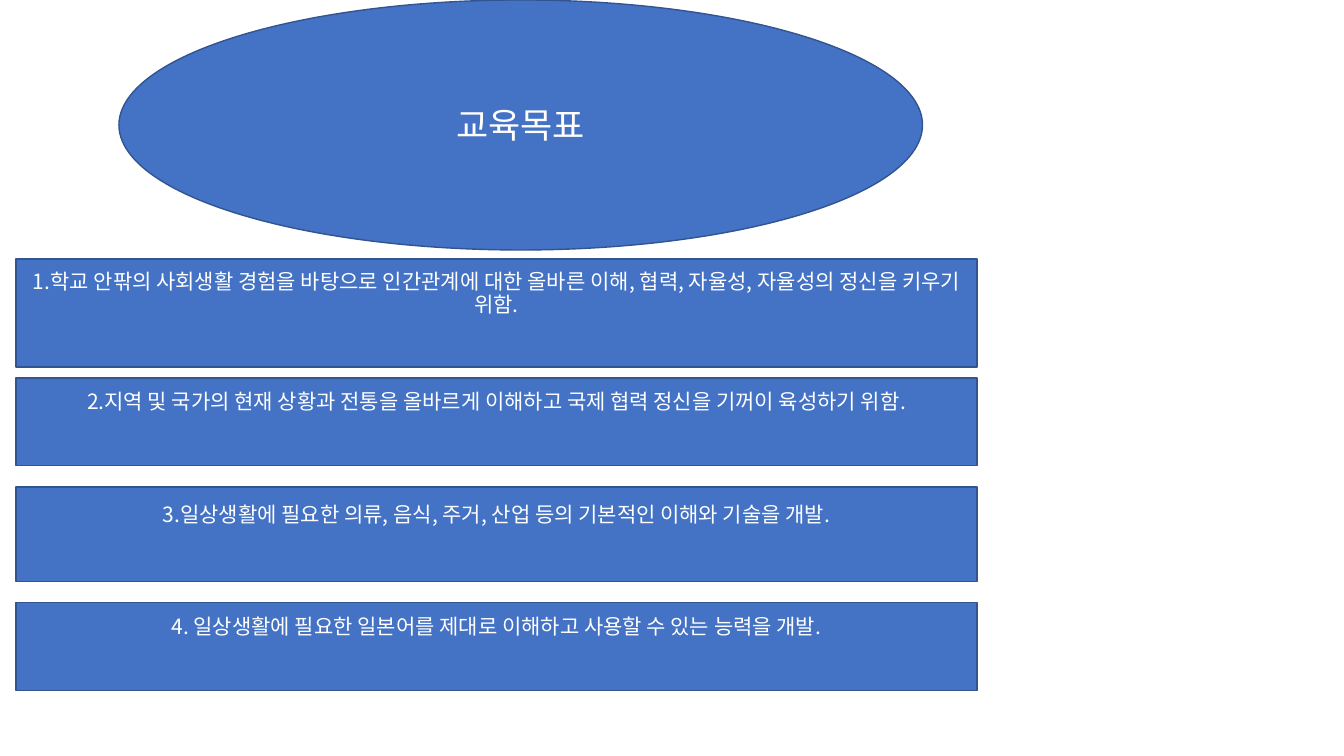
"""Build a slide listing four educational goals under an oval heading."""
from lxml.etree import SubElement
from pptx import Presentation
from pptx.dml.color import RGBColor
from pptx.enum.shapes import MSO_SHAPE as SHAPE
from pptx.enum.text import MSO_ANCHOR as ANCHOR, PP_ALIGN as ALIGN
from pptx.oxml.ns import qn
from pptx.util import Inches, Pt

FONT = "Noto Sans CJK KR"


def color(hex_code):
    return RGBColor.from_string(hex_code)


def add_panel(kind, left, top, width, height, wording, size):
    panel = slide.shapes.add_shape(
        kind, Inches(left), Inches(top), Inches(width), Inches(height))
    panel.shadow.inherit = False
    panel.fill.solid()
    panel.fill.fore_color.rgb = color("4472C4")
    panel.line.color.rgb = color("325491")
    panel.line.width = Pt(1)
    frame = panel.text_frame
    frame.word_wrap = True
    frame.vertical_anchor = ANCHOR.MIDDLE
    paragraph = frame.paragraphs[0]
    paragraph.alignment = ALIGN.CENTER
    run = paragraph.add_run()
    run.text = wording
    run.font.size = Pt(size)
    run.font.color.rgb = color("FFFFFF")
    run.font.name = FONT
    SubElement(run.font._element, qn("a:ea"), typeface=FONT)
    return frame


deck = Presentation()
deck.slide_width = Inches(13.33)
deck.slide_height = Inches(7.5)
slide = deck.slides.add_slide(deck.slide_layouts[6])

add_panel(SHAPE.OVAL, 1.18, 0, 7.97, 2.48, "교육목표", 25)

goals = [
    (2.57, 1.07, "1.학교 안팎의 사회생활 경험을 바탕으로 인간관계에 대한 올바른 이해, "
                 "협력, 자율성, 자율성의 정신을 키우기 위함."),
    (3.75, 0.87, "2.지역 및 국가의 현재 상황과 전통을 올바르게 이해하고 "
                 "국제 협력 정신을 기꺼이 육성하기 위함."),
    (4.83, 0.94, "3.일상생활에 필요한 의류, 음식, 주거, 산업 등의 "
                 "기본적인 이해와 기술을 개발."),
    (5.98, 0.87, "4. 일상생활에 필요한 일본어를 제대로 이해하고 "
                 "사용할 수 있는 능력을 개발."),
]
for top, height, goal in goals:
    goal_frame = add_panel(SHAPE.RECTANGLE, 0.16, top, 9.53, height, goal, 15)
    goal_frame.margin_bottom = Inches(0.42)
    goal_frame.paragraphs[0].line_spacing = 0.9
    goal_frame.paragraphs[0].space_before = Pt(10)

deck.save("out.pptx")
